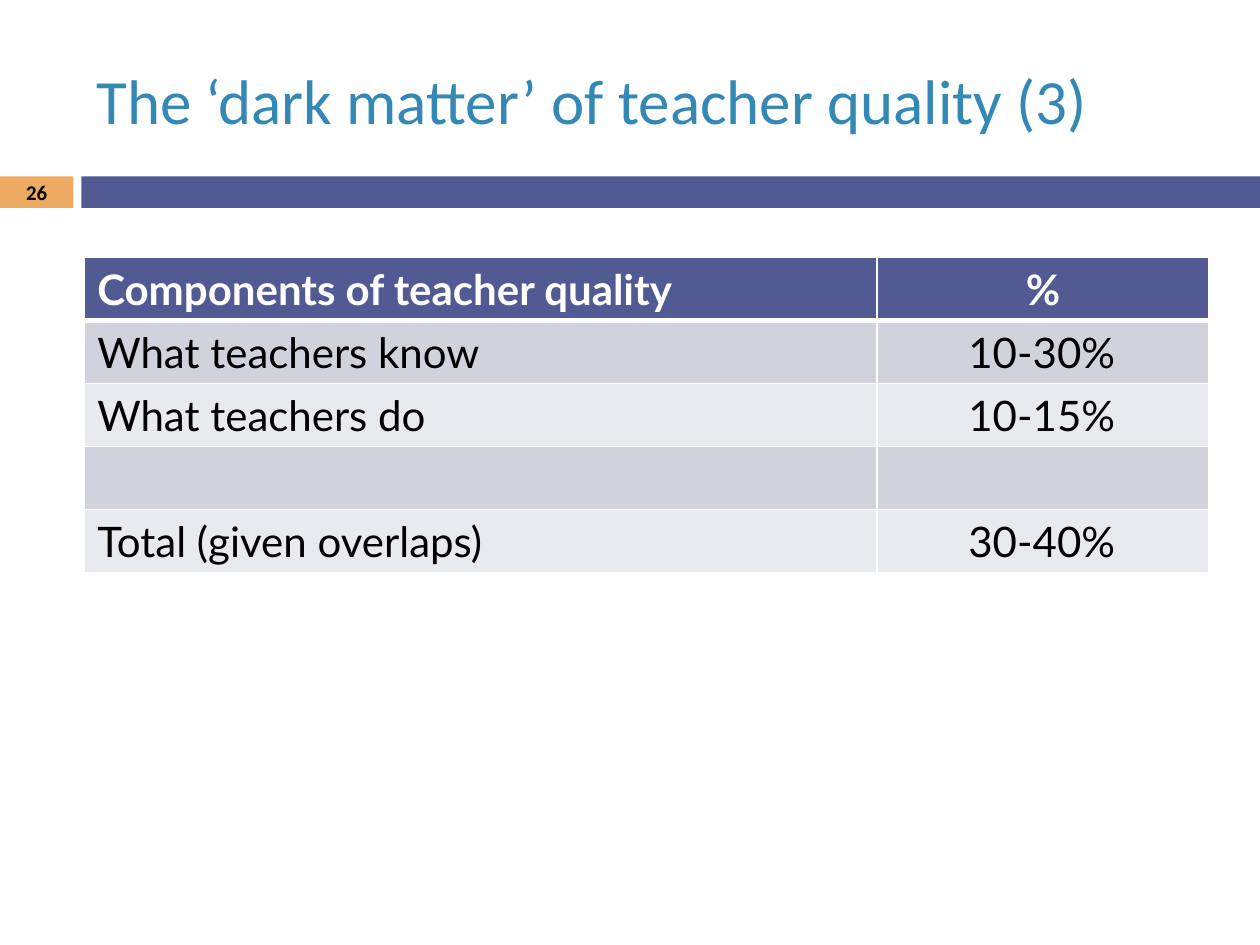
from lxml import etree
from pptx import Presentation
from pptx.dml.color import RGBColor
from pptx.enum.shapes import MSO_SHAPE
from pptx.enum.text import MSO_ANCHOR, PP_ALIGN
from pptx.oxml.ns import qn
from pptx.util import Pt

RECT = MSO_SHAPE.RECTANGLE
MIDDLE = MSO_ANCHOR.MIDDLE
LEFT, CENTER = PP_ALIGN.LEFT, PP_ALIGN.CENTER

COLORS = {
    "title": "3488B6",
    "bar": "525A93",
    "number": "EDAA61",
    "band_dark": "D1D2DC",
    "band_light": "E9EAEE",
    "white": "FFFFFF",
    "black": "000000",
}

ROWS = [
    ("Components of teacher quality", "%"),
    ("What teachers know", "10-30%"),
    ("What teachers do", "10-15%"),
    ("", ""),
    ("Total (given overlaps)", "30-40%"),
]
COL_WIDTHS = (452.9, 189.4)
ROW_HEIGHT = 36


def rgb(name):
    return RGBColor.from_string(COLORS[name])


def write_text(tf, text, size, color="black", font="Calibri", bold=False, align=LEFT):
    p = tf.paragraphs[0]
    p.alignment = align
    r = p.add_run()
    r.text = text
    r.font.name = font
    r.font.size = Pt(size)
    r.font.bold = bold
    r.font.color.rgb = rgb(color)


def add_bar(slide, x, y, w, h, color):
    sp = slide.shapes.add_shape(RECT, Pt(x), Pt(y), Pt(w), Pt(h))
    sp.shadow.inherit = False
    sp.fill.solid()
    sp.fill.fore_color.rgb = rgb(color)
    sp.line.fill.background()


def add_text(slide, x, y, w, h, text, **style):
    tf = slide.shapes.add_textbox(Pt(x), Pt(y), Pt(w), Pt(h)).text_frame
    tf.word_wrap = True
    tf.vertical_anchor = MIDDLE
    write_text(tf, text, **style)


def set_borders(cell, top, bottom):
    """Draw white cell borders; top and bottom are widths in points."""
    tc_pr = cell._tc.get_or_add_tcPr()
    widths = (("a:lnL", 1), ("a:lnR", 1), ("a:lnT", top), ("a:lnB", bottom))
    for i, (tag, width) in enumerate(widths):
        ln = etree.Element(qn(tag), w=str(Pt(width)))
        fill = etree.SubElement(ln, qn("a:solidFill"))
        etree.SubElement(fill, qn("a:srgbClr"), val=COLORS["white"])
        tc_pr.insert(i, ln)


def add_quality_table(slide, x, y):
    table = slide.shapes.add_table(
        len(ROWS), len(COL_WIDTHS), Pt(x), Pt(y),
        Pt(sum(COL_WIDTHS)), Pt(ROW_HEIGHT * len(ROWS))).table
    for column, width in zip(table.columns, COL_WIDTHS):
        column.width = Pt(width)
    for i, texts in enumerate(ROWS):
        table.rows[i].height = Pt(ROW_HEIGHT)
        header = i == 0
        band = "bar" if header else ("band_light", "band_dark")[i % 2]
        for j, text in enumerate(texts):
            cell = table.cell(i, j)
            cell.fill.solid()
            cell.fill.fore_color.rgb = rgb(band)
            set_borders(cell, top=3 if i == 1 else 1, bottom=3 if header else 1)
            if j == 1 and not header:
                cell.margin_right = Pt(8.64)
            if text:
                write_text(cell.text_frame, text, 24, font="Lato", bold=header,
                           color="white" if header else "black",
                           align=CENTER if j else LEFT)


def main():
    prs = Presentation()
    prs.slide_width, prs.slide_height = Pt(720), Pt(540)
    slide = prs.slides.add_slide(prs.slide_layouts[6])
    add_bar(slide, 0, 100.8, 42, 18, "number")
    add_bar(slide, 46.5, 100.8, 673.5, 18, "bar")
    add_text(slide, 48, 18, 642, 78, "The ‘dark matter’ of teacher quality (3)",
             size=36, color="title")
    add_text(slide, 0, 100.4, 42, 19.2, "26", size=11.9, bold=True, align=CENTER)
    add_quality_table(slide, 48.4, 147.2)
    prs.save("out.pptx")


if __name__ == "__main__":
    main()
